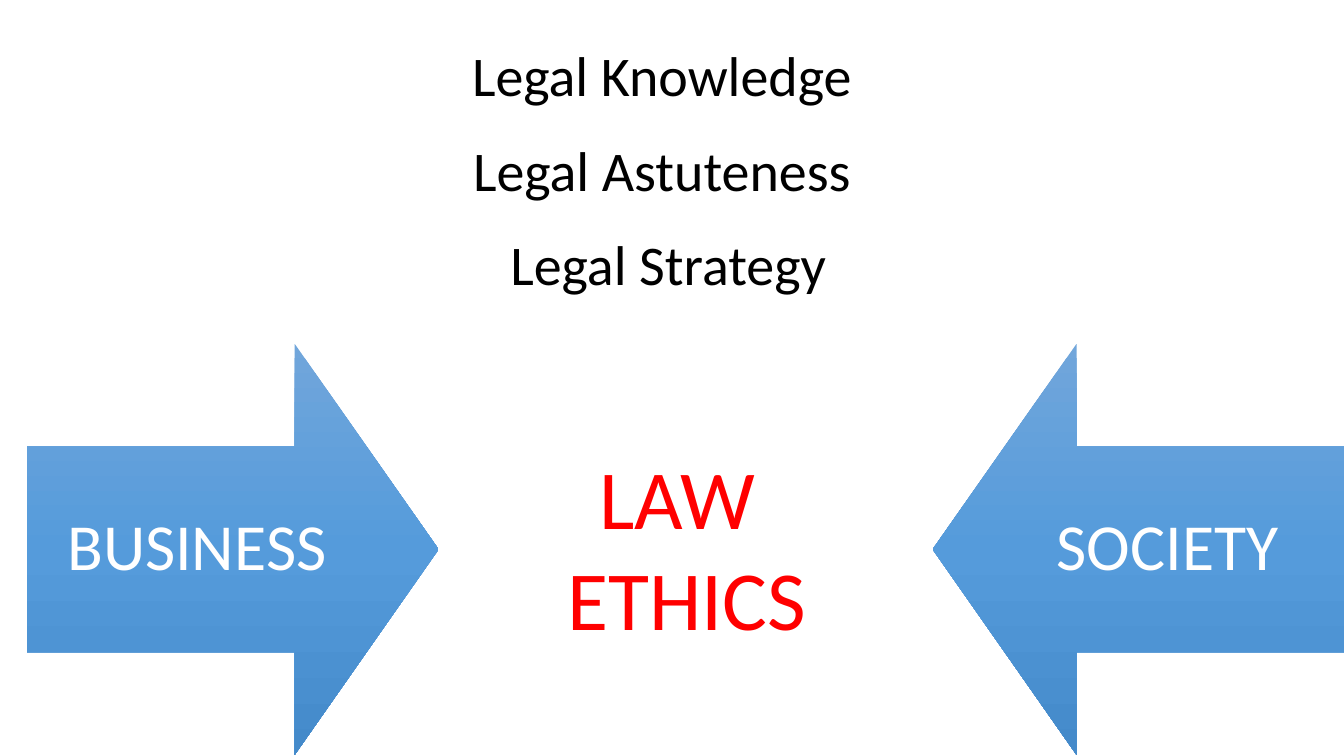
"""Build the slide on business and society meeting in law and ethics."""
import copy

import pptx
import pptx.dml.color
import pptx.enum.shapes
import pptx.enum.text
import pptx.oxml.ns
import pptx.util
from lxml import etree

Inches, Pt = pptx.util.Inches, pptx.util.Pt
SHAPE = pptx.enum.shapes.MSO_SHAPE
CENTER = pptx.enum.text.PP_ALIGN.CENTER
MIDDLE = pptx.enum.text.MSO_ANCHOR.MIDDLE
NO_FIT = pptx.enum.text.MSO_AUTO_SIZE.NONE
qn = pptx.oxml.ns.qn

SKILLS = ["Legal Knowledge", "Legal Astuteness", " Legal Strategy"]
CORE = ["LAW ", "ETHICS"]
ARROWS = [
    ("BUSINESS", SHAPE.RIGHT_ARROW, 0.27, 0.27),
    ("SOCIETY ", SHAPE.LEFT_ARROW, 9.25, 9.97),
]
GRADIENT = [(0, "71A6DB"), (0.5, "559BDB"), (1, "448ACA")]
ARROW_TOP, ARROW_SIZE = 3.41, 4.08
LABEL_WIDTH = 3.37


def rgb(color):
    return pptx.dml.color.RGBColor.from_string(color)


def write_lines(tf, lines, size, color):
    tf.word_wrap = True
    tf.auto_size = NO_FIT
    for i, line in enumerate(lines):
        p = tf.add_paragraph() if i else tf.paragraphs[0]
        p.alignment = CENTER
        r = p.add_run()
        r.text = line
        r.font.name = "Calibri"
        r.font.size = Pt(size)
        r.font.color.rgb = rgb(color)


def add_text(s, box, lines, size, color):
    tf = s.shapes.add_textbox(*map(Inches, box)).text_frame
    write_lines(tf, lines, size, color)
    return tf


def fill_gradient(sp):
    sp.fill.gradient()
    sp.fill.gradient_angle = 270
    first = sp._element.spPr.find(".//" + qn("a:gs"))
    first.addnext(copy.deepcopy(first))
    for stop, (position, color) in zip(sp.fill.gradient_stops, GRADIENT):
        stop.position = position
        stop.color.rgb = rgb(color)


def add_skills(s):
    body = s.placeholders[1]
    body.left, body.top, body.width, body.height = map(Inches, (0.46, 0.22, 11.96, 6.53))
    write_lines(body.text_frame, SKILLS, 40, "000000")
    for i, p in enumerate(body.text_frame.paragraphs):
        p.line_spacing = 1.2
        p.space_before = Pt(10 if i else 0)
        pPr = p._p.get_or_add_pPr()
        pPr.set("marL", str(Inches(0.25)))
        pPr.set("indent", "0")
        etree.SubElement(pPr, qn("a:buNone"))


def add_arrow(s, label, kind, left, label_left):
    sp = s.shapes.add_shape(kind, *map(Inches, (left, ARROW_TOP, ARROW_SIZE, ARROW_SIZE)))
    sp.adjustments[0], sp.adjustments[1] = 0.5, 0.35
    sp.shadow.inherit = False
    sp.line.fill.background()
    fill_gradient(sp)
    box = (label_left, ARROW_TOP + ARROW_SIZE / 4, LABEL_WIDTH, ARROW_SIZE / 2)
    tf = add_text(s, box, [label], 47, "FFFFFF")
    tf.vertical_anchor = MIDDLE
    tf.margin_left = tf.margin_right = tf.margin_top = tf.margin_bottom = Inches(0.37)
    tf.paragraphs[0].line_spacing = 0.9


def main():
    prs = pptx.Presentation()
    prs.slide_width, prs.slide_height = Inches(13.33), Inches(7.5)
    s = prs.slides.add_slide(prs.slide_layouts[1])
    title = s.shapes.title._element
    title.getparent().remove(title)
    add_skills(s)
    for arrow in ARROWS:
        add_arrow(s, *arrow)
    add_text(s, (5.05, 4.37, 3.52, 2.12), CORE, 60, "FF0000")
    prs.save("out.pptx")


if __name__ == "__main__":
    main()
